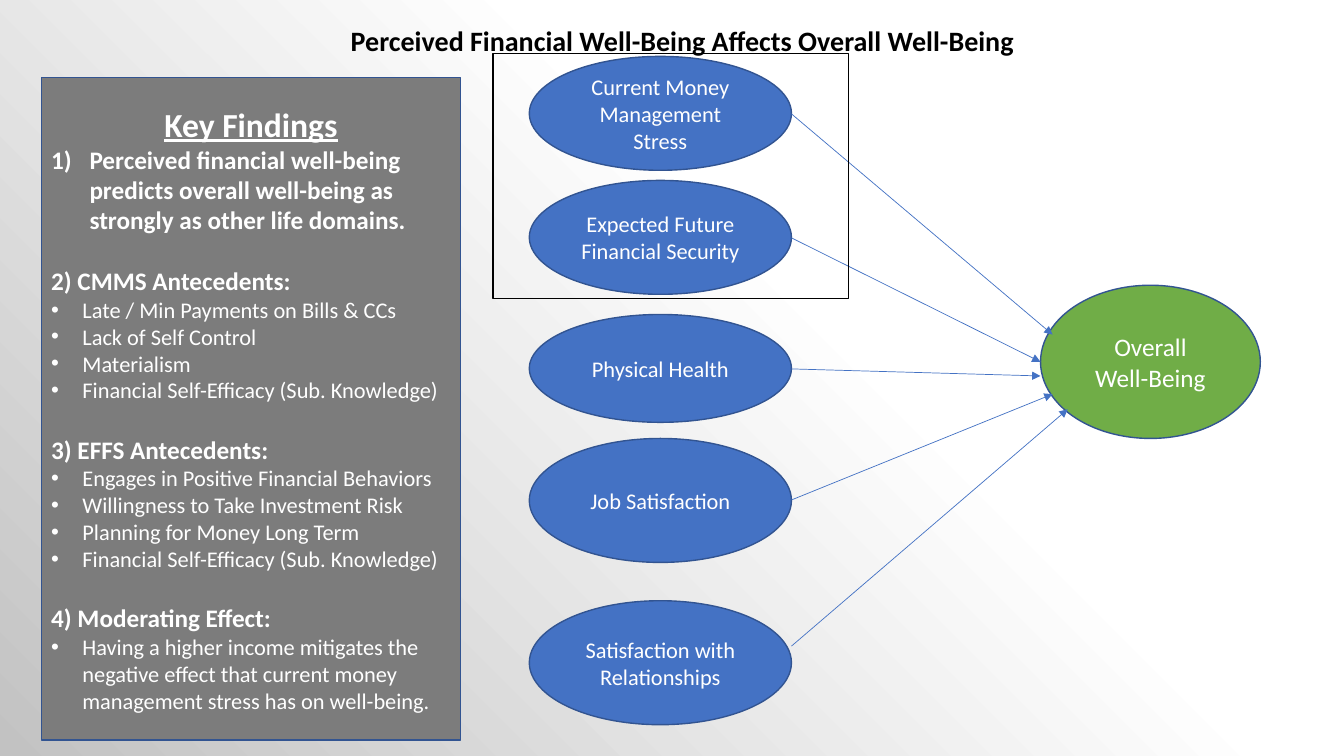
from lxml import etree
from pptx import Presentation
from pptx.dml.color import RGBColor
from pptx.enum.shapes import MSO_CONNECTOR, MSO_SHAPE
from pptx.enum.text import MSO_ANCHOR, PP_ALIGN
from pptx.oxml.ns import qn
from pptx.util import Inches, Pt

OVAL, RECT = MSO_SHAPE.OVAL, MSO_SHAPE.RECTANGLE
STRAIGHT = MSO_CONNECTOR.STRAIGHT
MIDDLE = MSO_ANCHOR.MIDDLE
LEFT, CENTER = PP_ALIGN.LEFT, PP_ALIGN.CENTER
BLUE, GREEN, GRAY, EDGE = "4472C4", "70AD47", "7C7C7C", "325491"


def rgb(code):
    return RGBColor.from_string(code)


def add_box(kind, left, top, width, height, fill, lines=(), size=16):
    box = slide.shapes.add_shape(
        kind, Inches(left), Inches(top), Inches(width), Inches(height))
    box.shadow.inherit = False
    box.fill.solid()
    box.fill.fore_color.rgb = rgb(fill)
    box.line.color.rgb = rgb(EDGE)
    box.line.width = Pt(1)
    frame = box.text_frame
    frame.word_wrap = True
    frame.vertical_anchor = MIDDLE
    for i, line in enumerate(lines):
        para = frame.add_paragraph() if i else frame.paragraphs[0]
        para.text = line
        para.alignment = CENTER
        para.font.name = "Calibri"
        para.font.size = Pt(size)
        para.font.color.rgb = rgb("FFFFFF")
    return box


prs = Presentation()
prs.slide_width, prs.slide_height = Inches(13.33), Inches(7.5)
slide = prs.slides.add_slide(prs.slide_layouts[6])

back = slide.background.fill
back.gradient()
back.gradient_angle = 225
for stop, place, code in zip(back.gradient_stops, (0.39, 1), ("FFFFFF", "C2C2C2")):
    stop.position = place
    stop.color.rgb = rgb(code)

domains = [
    (0.56, 1.13, ["Current Money Management", "Stress"], 1.13, (10.44, 3.32)),
    (1.79, 1.13, ["Expected Future Financial Security"], 2.36, (10.32, 3.59)),
    (3.12, 1.07, ["Physical Health"], 3.66, (10.32, 3.73)),
    (4.35, 1.23, ["Job Satisfaction"], 4.96, (10.44, 3.91)),
    (5.96, 1.23, ["Satisfaction with Relationships"], 6.41, (10.59, 4.06)),
]
add_box(OVAL, 10.32, 2.83, 2.18, 1.52, GREEN, ["Overall", "Well-Being"], 18)
for top, height, lines, start, (x, y) in domains:
    add_box(OVAL, 5.25, top, 2.6, height, BLUE, lines)
    arrow = slide.shapes.add_connector(
        STRAIGHT, Inches(7.85), Inches(start), Inches(x), Inches(y))
    arrow.line.color.rgb = rgb(BLUE)
    arrow.line.width = Pt(0.5)
    etree.SubElement(arrow.line._get_or_add_ln(), qn("a:tailEnd"), type="triangle")
    etree.SubElement(arrow._element.spPr, qn("a:effectLst"))

title = slide.shapes.add_textbox(
    Inches(3.38), Inches(0.18), Inches(7.54), Inches(0.44))
title.text_frame.word_wrap = True
para = title.text_frame.paragraphs[0]
para.text = "Perceived Financial Well-Being Affects Overall Well-Being"
para.font.name = "Calibri"
para.font.size = Pt(20)
para.font.bold = True
para.font.color.rgb = rgb("000000")

findings = [
    ("title", "Key Findings"),
    ("number", "Perceived financial well-being predicts overall well-being "
               "as strongly as other life domains."),
    ("head", "2) CMMS Antecedents:"),
    ("bullet", "Late / Min Payments on Bills & CCs"),
    ("bullet", "Lack of Self Control"),
    ("bullet", "Materialism"),
    ("bullet", "Financial Self-Efficacy (Sub. Knowledge)"),
    ("head", "3) EFFS Antecedents:"),
    ("bullet", "Engages in Positive Financial Behaviors"),
    ("bullet", "Willingness to Take Investment Risk"),
    ("bullet", "Planning for Money Long Term"),
    ("bullet", "Financial Self-Efficacy (Sub. Knowledge)"),
    ("head", "4) Moderating Effect:"),
    ("bullet", "Having a higher income mitigates the negative effect that "
               "current money management stress has on well-being."),
]
sizes = {"title": 24, "number": 18, "head": 18, "bullet": 16}
marks = {
    "number": (0.38, "a:buAutoNum", {"type": "arabicParenR"}),
    "bullet": (0.31, "a:buChar", {"char": "•"}),
}
panel = add_box(RECT, 0.41, 0.77, 4.16, 6.57, GRAY, [text for _, text in findings])
for para, (role, _) in zip(panel.text_frame.paragraphs, findings):
    para.alignment = CENTER if role == "title" else LEFT
    para.font.size = Pt(sizes[role])
    para.font.bold = role != "bullet"
    para.font.underline = role == "title"
    if role == "head":
        para.space_before = Pt(22)
    if role in marks:
        indent, tag, attrs = marks[role]
        props = para._p.get_or_add_pPr()
        props.set("marL", str(Inches(indent)))
        props.set("indent", str(-Inches(indent)))
        props.insert(0, etree.Element(qn(tag), attrs))
        props.insert(0, etree.Element(qn("a:buFont"), typeface="Arial" if role == "bullet" else "Calibri"))

group = add_box(RECT, 4.89, 0.53, 3.53, 2.43, "FFFFFF")
group.fill.background()
group.line.color.rgb = rgb("000000")
group.line.width = Pt(0.75)

prs.save("out.pptx")
